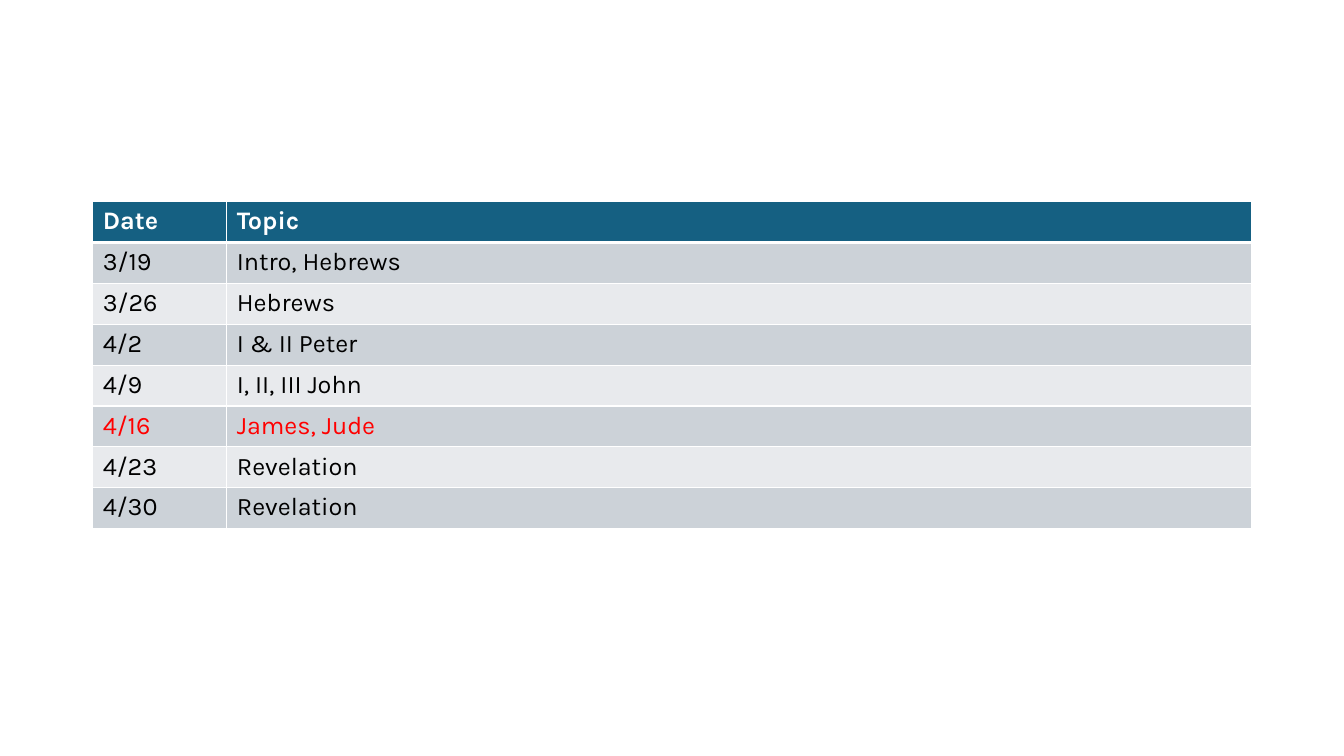
import pptx
import pptx.util
import pptx.dml.color
import pptx.oxml
import pptx.oxml.ns

Pt = pptx.util.Pt
RGB = pptx.dml.color.RGBColor.from_string

COLORS = {
    "head": "156082",
    "dark": "CCD2D8",
    "light": "E8EAED",
    "white": "FFFFFF",
    "black": "000000",
    "red": "FF0000",
}

ROWS = [
    ("Date", "Topic"),
    ("3/19", "Intro, Hebrews"),
    ("3/26", "Hebrews"),
    ("4/2", "I & II Peter"),
    ("4/9", "I, II, III John"),
    ("4/16", "James, Jude"),
    ("4/23", "Revelation"),
    ("4/30", "Revelation"),
]
NOW = "4/16"
WIDTHS = (95.76, 732.24)
HIGH = 29.2


def add_line(cell, side, width):
    cell._tc.get_or_add_tcPr().append(pptx.oxml.parse_xml(
        f'<a:ln{side} {pptx.oxml.ns.nsdecls("a")} w="{Pt(width)}">'
        f'<a:solidFill><a:srgbClr val="{COLORS["white"]}"/></a:solidFill>'
        f'</a:ln{side}>'))


# Slide
deck = pptx.Presentation()
deck.slide_width, deck.slide_height = Pt(960), Pt(540)
slide = deck.slides.add_slide(deck.slide_layouts[6])

# Schedule table
frame = slide.shapes.add_table(len(ROWS), len(WIDTHS), Pt(66.24), Pt(144),
                               Pt(sum(WIDTHS)), Pt(HIGH * len(ROWS)))
table = frame.table
for col, width in zip(table.columns, WIDTHS):
    col.width = Pt(width)

# Cells: header, then banded rows with the current date in red
for i, row in enumerate(ROWS):
    table.rows[i].height = Pt(HIGH)
    if i == 0:
        fill, ink = "head", "white"
    else:
        fill = "dark" if i % 2 else "light"
        ink = "red" if row[0] == NOW else "black"
    for j, text in enumerate(row):
        cell = table.cell(i, j)
        for side in "LRTB":
            thick = (i, side) in ((0, "B"), (1, "T"))
            add_line(cell, side, 3 if thick else 1)
        cell.fill.solid()
        cell.fill.fore_color.rgb = RGB(COLORS[fill])
        cell.text_frame.text = text
        font = cell.text_frame.paragraphs[0].runs[0].font
        font.name = "Karla"
        font.size = Pt(18)
        font.bold = i == 0
        font.color.rgb = RGB(COLORS[ink])

deck.save("out.pptx")
